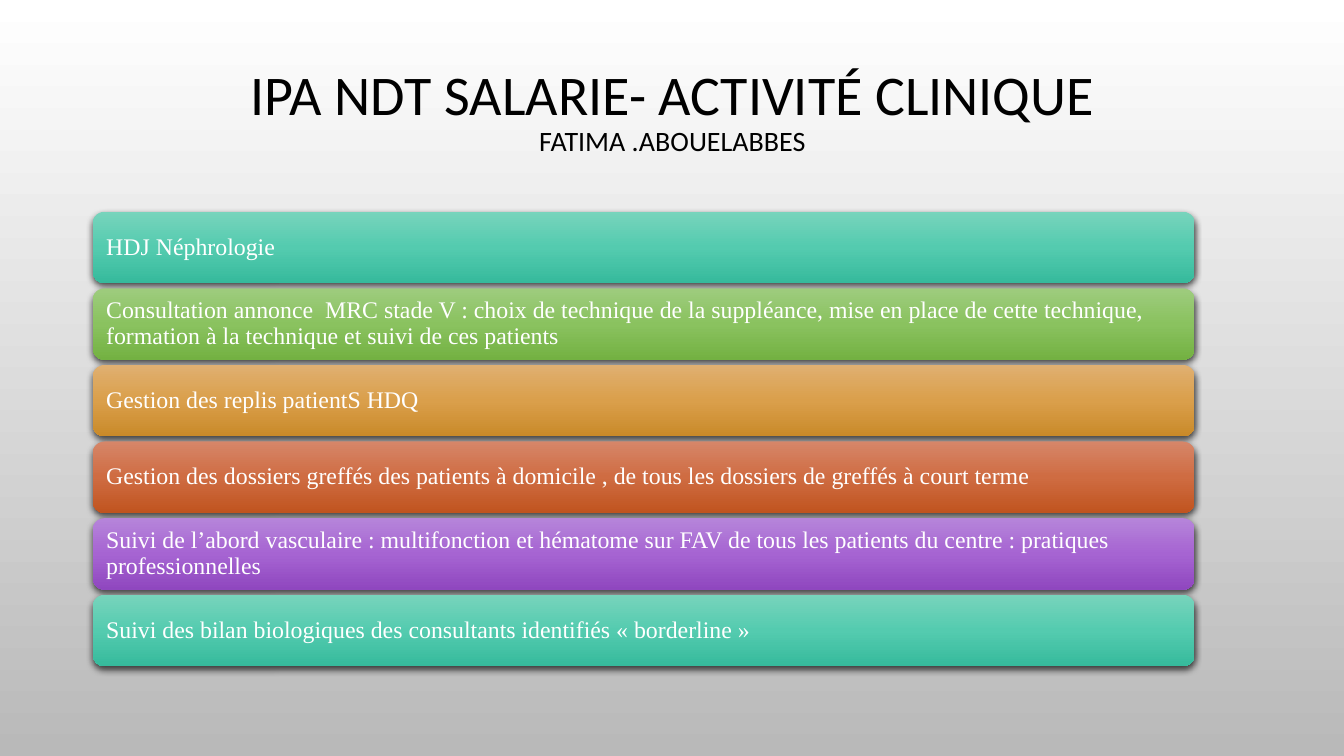
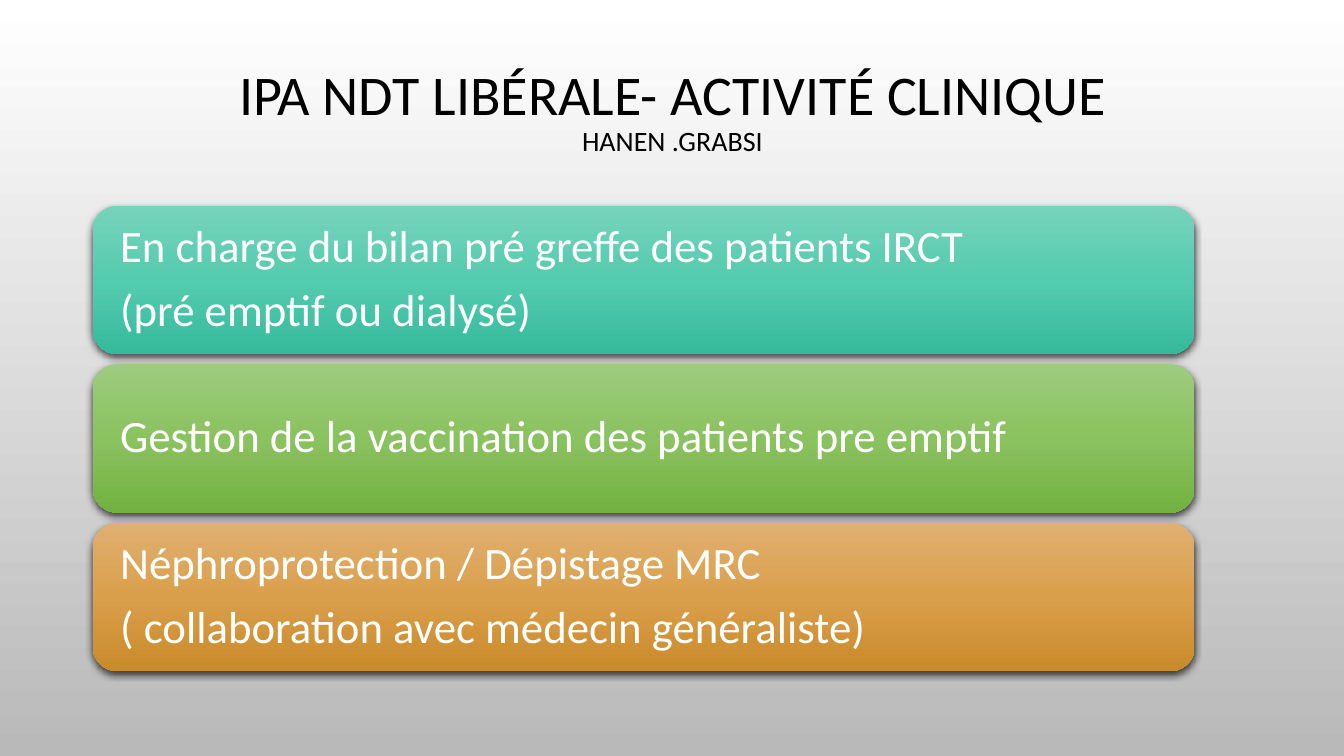
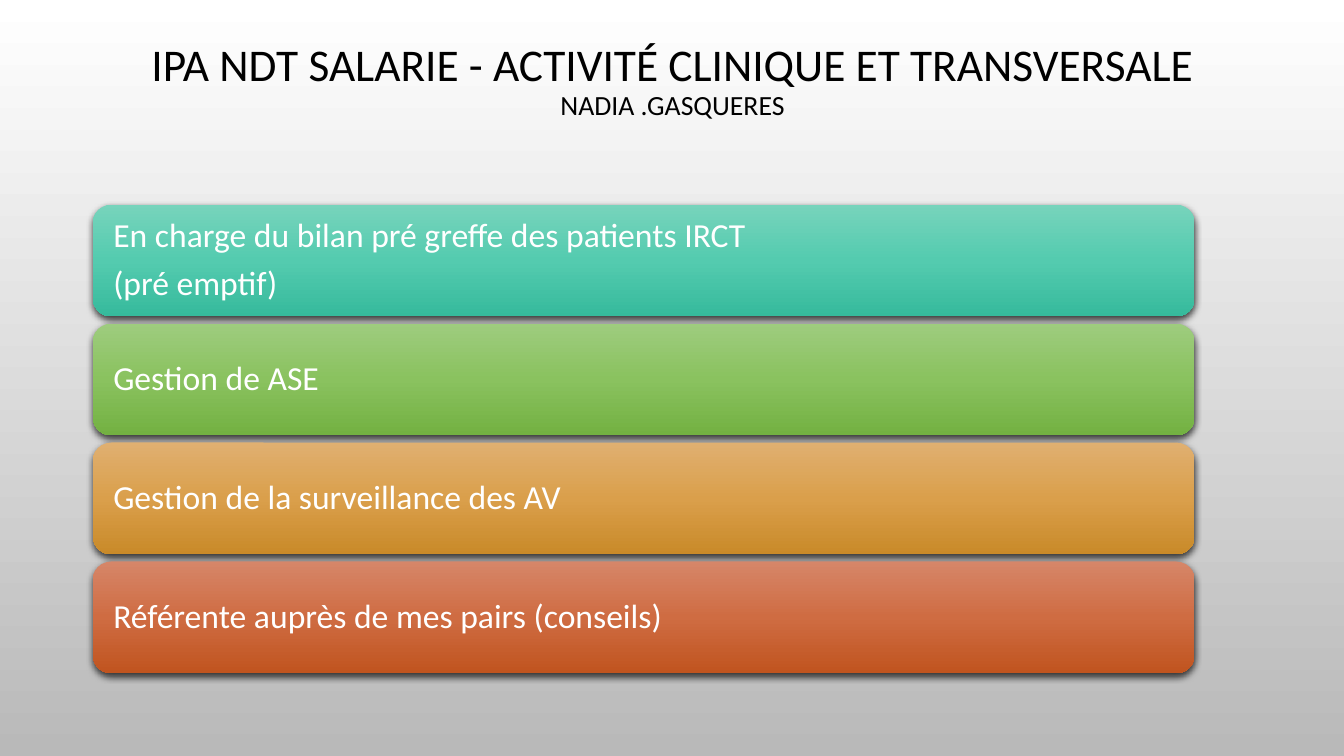
from copy import deepcopy

from lxml.etree import SubElement
from pptx import Presentation
from pptx.dml.color import RGBColor
from pptx.enum.shapes import MSO_SHAPE as Shape
from pptx.enum.text import MSO_ANCHOR as Anchor, MSO_AUTO_SIZE as AutoSize, PP_ALIGN as Align
from pptx.oxml.ns import qn
from pptx.util import Inches, Pt

BLACK = RGBColor(0x00, 0x00, 0x00)
WHITE = RGBColor(0xFF, 0xFF, 0xFF)
GREY = RGBColor(0xB9, 0xB9, 0xB9)

# Top, middle and bottom colour of each bar, used in turn
TEAL = (RGBColor(0x77, 0xD4, 0xBC), RGBColor(0x54, 0xCB, 0xAF), RGBColor(0x36, 0xBA, 0x9C))
GREEN = (RGBColor(0x9E, 0xCC, 0x7E), RGBColor(0x8A, 0xC2, 0x5F), RGBColor(0x73, 0xB1, 0x42))
AMBER = (RGBColor(0xE0, 0xB0, 0x71), RGBColor(0xDA, 0x9F, 0x4B), RGBColor(0xC9, 0x8A, 0x29))
RUST = (RGBColor(0xD6, 0x86, 0x69), RGBColor(0xCF, 0x6C, 0x42), RGBColor(0xC0, 0x54, 0x1F))
PURPLE = (RGBColor(0xB6, 0x85, 0xDA), RGBColor(0xA6, 0x64, 0xD2), RGBColor(0x8F, 0x47, 0xBF))
BAR_COLOURS = (TEAL, GREEN, AMBER, RUST, PURPLE)

SANS = "Calibri"
SERIF = "Times New Roman"
LINE_SPACING = 0.9
BAR_LEFT, BAR_WIDTH = 0.92, 10.93

SLIDES = [
    {
        "title": ("IPA NDT SALARIE- ACTIVITÉ CLINIQUE", "FATIMA .ABOUELABBES"),
        "title_sizes": (40, 20),
        "title_bottom": 0.05,
        "bars": {"top": 2.1, "bottom": 6.61, "gap": 0.05, "inset": 0.1, "font": SERIF, "size": 17},
        "items": [
            "HDJ Néphrologie",
            "Consultation annonce  MRC stade V : choix de technique de la suppléance, "
            "mise en place de cette technique, formation à la technique et suivi de ces patients",
            "Gestion des replis patientS HDQ",
            "Gestion des dossiers greffés des patients à domicile , "
            "de tous les dossiers de greffés à court terme",
            "Suivi de l’abord vasculaire : multifonction et hématome sur FAV "
            "de tous les patients du centre : pratiques professionnelles",
            "Suivi des bilan biologiques des consultants identifiés « borderline »",
        ],
    },
    {
        "title": ("IPA NDT LIBÉRALE- ACTIVITÉ CLINIQUE", "HANEN .GRABSI"),
        "title_sizes": (40, 20),
        "title_bottom": 0.05,
        "bars": {"top": 2.04, "bottom": 6.66, "gap": 0.1, "inset": 0.2, "font": SANS, "size": 32},
        "items": [
            "En charge du bilan pré greffe des patients IRCT\n(pré emptif ou dialysé)",
            "Gestion de la vaccination des patients pre emptif",
            "Néphroprotection / Dépistage MRC\n( collaboration avec médecin généraliste)",
        ],
    },
    {
        "title": ("IPA NDT SALARIE - ACTIVITÉ CLINIQUE ET TRANSVERSALE", "NADIA .GASQUERES"),
        "title_sizes": (32.4, 19.8),
        "title_bottom": 0.66,
        "bars": {"top": 2.03, "bottom": 6.68, "gap": 0.07, "inset": 0.15, "font": SANS, "size": 24},
        "items": [
            "En charge du bilan pré greffe des patients IRCT\n(pré emptif)",
            "Gestion de ASE",
            "Gestion de la surveillance des AV",
            "Référente auprès de mes pairs (conseils)",
        ],
    },
]


def fill_gradient(fill, element, colours):
    """Fill from top to bottom with evenly spaced colours."""
    fill.gradient()
    fill.gradient_angle = 270
    stop_list = next(element.iter(qn("a:gsLst")))
    while len(stop_list) < len(colours):
        stop_list.append(deepcopy(stop_list[0]))
    for index, (stop, colour) in enumerate(zip(fill.gradient_stops, colours)):
        stop.position = index / (len(colours) - 1)
        stop.color.rgb = colour


def add_shadow(shape):
    """Give a shape a soft shadow straight below it."""
    shape.shadow.inherit = False
    effects = shape.element.spPr.find(qn("a:effectLst"))
    shadow = SubElement(effects, qn("a:outerShdw"), blurRad=str(Pt(5)), dist=str(Pt(2)),
                        dir="5400000", algn="ctr", rotWithShape="0")
    colour = SubElement(shadow, qn("a:srgbClr"), val=str(BLACK))
    SubElement(colour, qn("a:alpha"), val="69000")


def write_lines(frame, lines, sizes, font, colour, align, gap=0):
    """Write one paragraph per line, with a gap in points between them."""
    frame.word_wrap = True
    frame.auto_size = AutoSize.NONE
    frame.vertical_anchor = Anchor.MIDDLE
    frame.text = "\n".join(lines)
    for index, (para, size) in enumerate(zip(frame.paragraphs, sizes)):
        para.alignment = align
        para.line_spacing = LINE_SPACING
        if index:
            para.space_before = Pt(gap)
        para.font.name = font
        para.font.size = Pt(size)
        para.font.color.rgb = colour


def add_bar(page, box, text, colours, font, size, inset):
    """Draw one rounded bar with its text in the given box."""
    bar = page.shapes.add_shape(Shape.ROUNDED_RECTANGLE, *map(Inches, box))
    fill_gradient(bar.fill, bar.element, colours)
    bar.line.fill.background()
    add_shadow(bar)
    frame = bar.text_frame
    frame.margin_left = frame.margin_right = Inches(inset)
    frame.margin_top = frame.margin_bottom = Inches(inset)
    lines = text.split("\n")
    write_lines(frame, lines, [size] * len(lines), font, WHITE, Align.LEFT, gap=0.35 * size)


def add_bars(page, items, top, bottom, gap, **style):
    """Stack equal bars between top and bottom."""
    height = (bottom - top + gap) / len(items) - gap
    for index, text in enumerate(items):
        box = (BAR_LEFT, top + index * (height + gap), BAR_WIDTH, height)
        add_bar(page, box, text, BAR_COLOURS[index % len(BAR_COLOURS)], **style)


def add_page(deck, layout, content):
    """Add a slide with a two-line title above a stack of bars."""
    page = deck.slides.add_slide(layout)
    frame = page.shapes.title.text_frame
    frame.margin_bottom = Inches(content["title_bottom"])
    write_lines(frame, content["title"], content["title_sizes"], SANS, BLACK, Align.CENTER)
    add_bars(page, content["items"], **content["bars"])


def main():
    deck = Presentation()
    deck.slide_width, deck.slide_height = Inches(13.33), Inches(7.5)

    # Shared background and title place
    master = deck.slide_master
    fill_gradient(master.background.fill, master.element, (WHITE, GREY))
    layout = deck.slide_layouts.get_by_name("Title Only")
    title = layout.placeholders[0]
    title.left, title.top = Inches(0.92), Inches(0.4)
    title.width, title.height = Inches(11.5), Inches(1.43)

    for content in SLIDES:
        add_page(deck, layout, content)
    deck.save("out.pptx")


if __name__ == "__main__":
    main()
